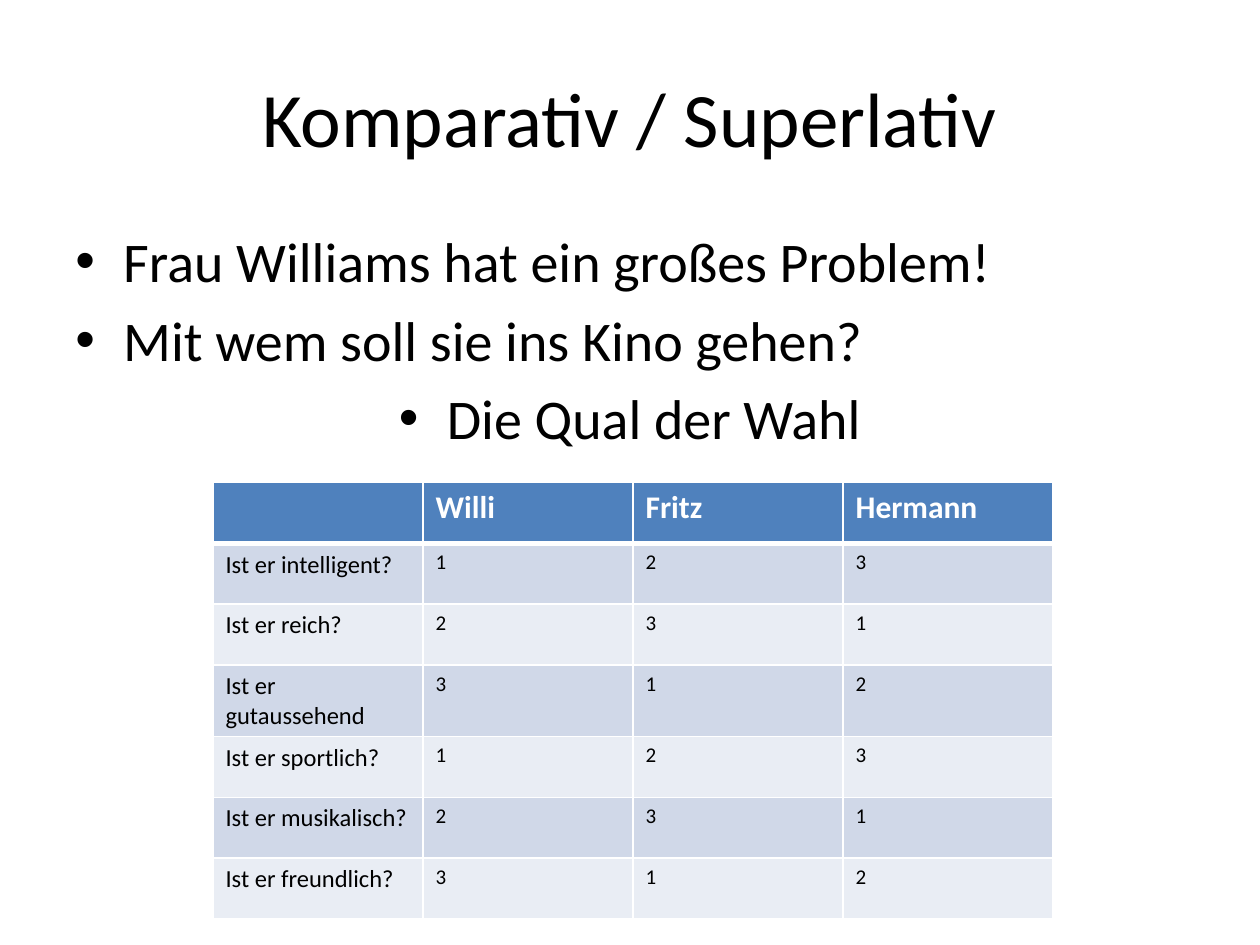
from dataclasses import dataclass

from lxml.etree import SubElement as Sub
from pptx import Presentation
from pptx.dml.color import RGBColor as Rgb
from pptx.enum.text import MSO_ANCHOR as Anchor, PP_ALIGN as Align
from pptx.oxml.ns import qn
from pptx.util import Inches, Pt

FONT = "Calibri"
HUES = {
    "ink": "000000",
    "white": "FFFFFF",
    "head": "4F81BD",
    "odd": "D0D8E8",
    "even": "E9EDF4",
}


@dataclass
class Line:
    text: str
    align: Align = Align.LEFT


@dataclass
class Row:
    label: str
    ranks: tuple


LINES = [
    Line("Frau Williams hat ein großes Problem!"),
    Line("Mit wem soll sie ins Kino gehen?"),
    Line("Die Qual der Wahl", Align.CENTER),
]
NAMES = Row("", ("Willi", "Fritz", "Hermann"))
ROWS = [
    Row("Ist er intelligent?", (1, 2, 3)),
    Row("Ist er reich?", (2, 3, 1)),
    Row("Ist er gutaussehend", (3, 1, 2)),
    Row("Ist er sportlich?", (1, 2, 3)),
    Row("Ist er musikalisch?", (2, 3, 1)),
    Row("Ist er freundlich?", (3, 1, 2)),
]


def style(para, size: float, hue: str = "ink", bold: bool = False) -> None:
    font = para.font
    font.name, font.size, font.bold = FONT, Pt(size), bold
    font.color.rgb = Rgb.from_string(HUES[hue])


def add_box(slide, left: float, top: float, width: float, height: float):
    box = slide.shapes.add_textbox(
        Inches(left), Inches(top), Inches(width), Inches(height)
    )
    box.text_frame.word_wrap = True
    return box.text_frame


def add_title(slide, text: str) -> None:
    frame = add_box(slide, 0.5, 0.3, 9, 1.25)
    frame.vertical_anchor = Anchor.MIDDLE
    para = frame.paragraphs[0]
    para.text, para.alignment = text, Align.CENTER
    style(para, 44)


def add_list(slide, lines: list[Line]) -> None:
    frame = add_box(slide, 0.5, 1.75, 9, 4.95)
    for num, line in enumerate(lines):
        para = frame.add_paragraph() if num else frame.paragraphs[0]
        para.text, para.alignment = line.text, line.align
        para.space_before = Pt(6.4)
        style(para, 32)
        props = para._p.get_or_add_pPr()
        props.set("marL", str(Inches(0.38)))
        props.set("indent", str(Inches(-0.38)))
        mark = Sub(props, qn("a:buFont"))
        mark.set("typeface", "Arial")
        Sub(props, qn("a:buChar")).set("char", "•")
        props.append(props.find(qn("a:defRPr")))


def add_edges(cell, base: float) -> None:
    props = cell._tc.get_or_add_tcPr()
    for side, width in (("L", 1), ("R", 1), ("T", 1), ("B", base)):
        edge = Sub(props, qn(f"a:ln{side}"), w=str(Pt(width)))
        fill = Sub(edge, qn("a:solidFill"))
        Sub(fill, qn("a:srgbClr"), val=HUES["white"])


def fill_cell(cell, text: str, size: float, fill: str, head: bool) -> None:
    add_edges(cell, 3 if head else 1)
    cell.fill.solid()
    cell.fill.fore_color.rgb = Rgb.from_string(HUES[fill])
    cell.text = text
    style(cell.text_frame.paragraphs[0], size, "white" if head else "ink", head)


def add_grid(slide, rows: list[Row]) -> None:
    cols = 1 + len(rows[0].ranks)
    table = slide.shapes.add_table(
        len(rows), cols, Inches(1.69), Inches(3.83),
        Inches(1.667 * cols), Inches(0.483 * len(rows)),
    ).table
    for num, row in enumerate(rows):
        head = num == 0
        fill = "head" if head else "odd" if num % 2 else "even"
        for col, value in enumerate((row.label, *row.ranks)):
            size = 18 if head else 12 if col else 14
            fill_cell(table.cell(num, col), str(value), size, fill, head)


def main() -> None:
    deck = Presentation()
    deck.slide_width, deck.slide_height = Inches(10), Inches(7.5)
    slide = deck.slides.add_slide(deck.slide_layouts[6])
    add_title(slide, "Komparativ / Superlativ")
    add_list(slide, LINES)
    add_grid(slide, [NAMES, *ROWS])
    deck.save("out.pptx")


if __name__ == "__main__":
    main()
